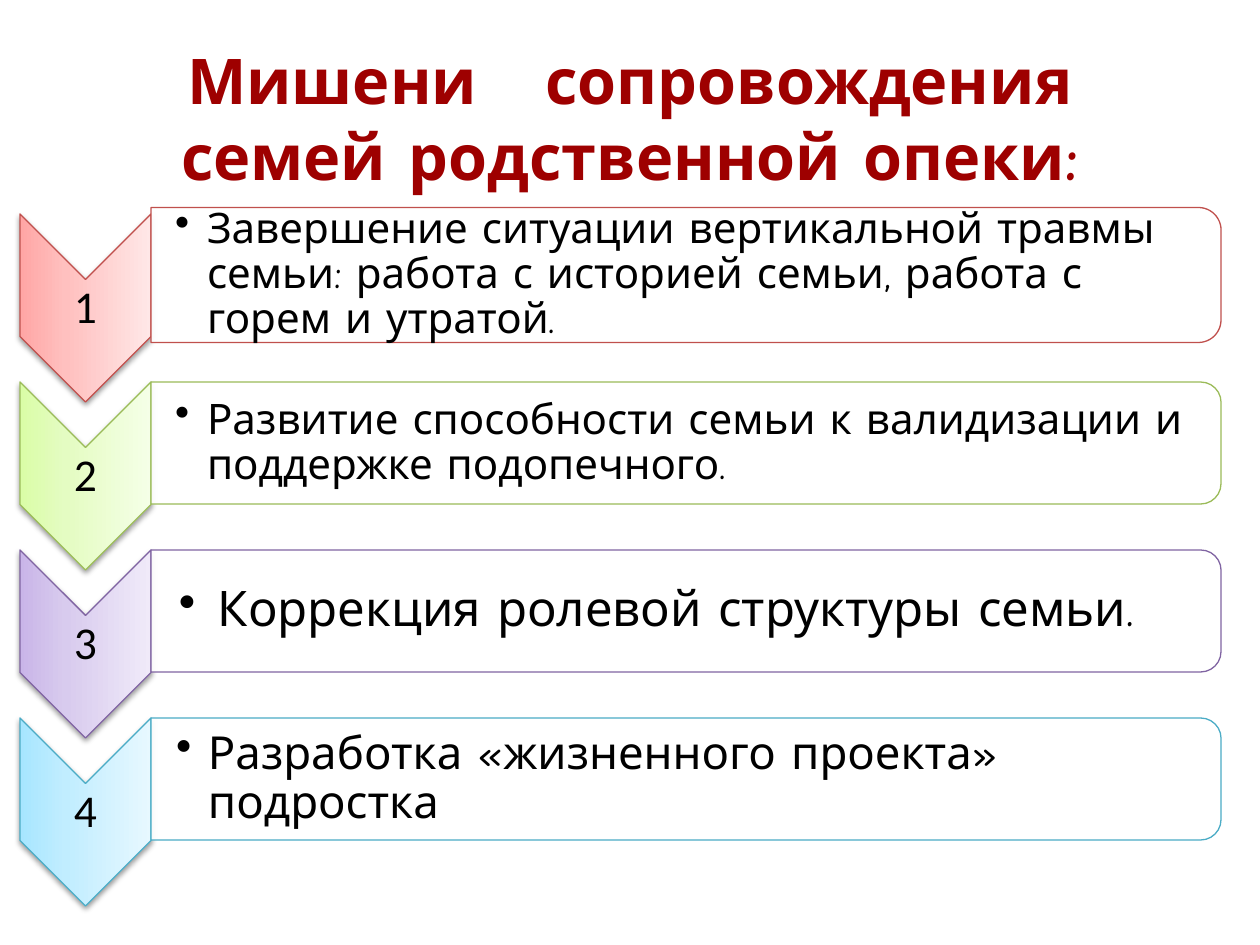
from lxml import etree
from pptx import Presentation
from pptx.dml.color import RGBColor
from pptx.enum.shapes import MSO_SHAPE
from pptx.enum.text import MSO_ANCHOR, PP_ALIGN
from pptx.oxml import parse_xml
from pptx.oxml.ns import nsdecls, qn
from pptx.util import Pt

CHEVRON = MSO_SHAPE.CHEVRON
ROUND_TOP = MSO_SHAPE.ROUND_2_SAME_RECTANGLE
MIDDLE = MSO_ANCHOR.MIDDLE
CENTER, LEFT = PP_ALIGN.CENTER, PP_ALIGN.LEFT

PX_PER_INCH = 126
WIDTH, HEIGHT = 1260, 945
BODY_FONT, NUMBER_FONT = "Comic Neue", "Calibri"

ROW_LEFT, ROW_TOP, ROW_PITCH, ROW_WIDTH = 20, 214, 168, 1201
CHEVRON_WIDTH, CHEVRON_HEIGHT = 131, 188

# text, size, panel height, left inset, indent, line colour, gradient from bottom to top
TARGETS = [
    ("Завершение ситуации вертикальной травмы семьи: работа с историей семьи, "
     "работа с горем и утратой.", 24, 135, 24, 32,
     "C0504D", ("FFA6A5", "FFC0BF", "FFE7E7")),
    ("Развитие способности семьи к валидизации и поддержке подопечного.",
     24, 122, 24, 32, "9BBB59", ("DAFDA7", "E4FCC2", "F5FFE7")),
    ("Коррекция ролевой структуры семьи.", 28, 122, 28, 39,
     "8064A2", ("C9B5E8", "D8CBEE", "F0EAF9")),
    ("Разработка «жизненного проекта» подростка", 26, 122, 25, 32,
     "4BACC6", ("A7E6FF", "C1EDFF", "E7F8FF")),
]


def px(length):
    return round(length * 914400 / PX_PER_INCH)


def rgb(value):
    return RGBColor.from_string(value)


def add_text(slide, box, runs, size, font=BODY_FONT, color="000000", bold=False,
             align=LEFT, insets=(3, 3, 3, 3), line_spacing=None, indent=0):
    """Place one paragraph; runs pairs each text with its letter spacing in points."""
    frame = slide.shapes.add_textbox(*map(px, box)).text_frame
    frame.word_wrap = True
    frame.vertical_anchor = MIDDLE
    (frame.margin_left, frame.margin_top,
     frame.margin_right, frame.margin_bottom) = map(px, insets)
    paragraph = frame.paragraphs[0]
    paragraph.alignment = align
    if line_spacing:
        paragraph.line_spacing = line_spacing
    if indent:
        properties = paragraph._p.get_or_add_pPr()
        properties.set("marL", str(px(indent)))
        properties.set("indent", str(-px(indent)))
        etree.SubElement(properties, qn("a:buChar")).set("char", "•")
    for text, spacing in runs:
        run = paragraph.add_run()
        run.text = text
        run.font.name, run.font.size, run.font.bold = font, Pt(size), bold
        run.font.color.rgb = rgb(color)
        if spacing:
            run._r.get_or_add_rPr().set("spc", str(spacing * 100))


def add_turned_shape(slide, kind, box, line_color):
    """Add a shape turned by 90 degrees that covers the box once turned."""
    left, top, width, height = box
    shift = (width - height) / 2
    shape = slide.shapes.add_shape(
        kind, px(left + shift), px(top - shift), px(height), px(width))
    shape.rotation = 90
    shape.shadow.inherit = False
    shape.line.color.rgb = rgb(line_color)
    shape.line.width = Pt(0.75)
    return shape


def add_chevron(slide, box, number, line_color, gradient):
    chevron = add_turned_shape(slide, CHEVRON, box, line_color)
    stops = "".join(
        f'<a:gs pos="{position}"><a:srgbClr val="{color}"/></a:gs>'
        for position, color in zip((0, 35000, 100000), gradient))
    properties = chevron._element.spPr
    properties.find(qn("a:prstGeom")).addnext(parse_xml(
        f'<a:gradFill {nsdecls("a")} rotWithShape="1"><a:gsLst>{stops}</a:gsLst>'
        '<a:lin ang="16200000" scaled="1"/></a:gradFill>'))
    properties.find(qn("a:effectLst")).append(parse_xml(
        f'<a:outerShdw {nsdecls("a")} blurRad="40000" dist="20000" dir="5400000" '
        'rotWithShape="0"><a:srgbClr val="000000"><a:alpha val="38000"/></a:srgbClr>'
        '</a:outerShdw>'))
    left, top, width, height = box
    notch = width // 2 + 1
    add_text(slide, (left, top + notch, width, height - 2 * notch + 1),
             [(str(number), 0)], 26, font=NUMBER_FONT, align=CENTER, line_spacing=0.9)


def add_panel(slide, box, text, size, inset, indent, line_color):
    panel = add_turned_shape(slide, ROUND_TOP, box, line_color)
    panel.fill.solid()
    panel.fill.fore_color.rgb = rgb("FFFFFF")
    fill_color = panel._element.spPr.find(qn("a:solidFill"))[0]
    etree.SubElement(fill_color, qn("a:alpha")).set("val", "90000")
    left, top, width, height = box
    add_text(slide, (left, top + 6, width - 7, height - 12), [(text, 0)], size,
             insets=(inset, 2, 2, 2), line_spacing=0.9, indent=indent)


def add_target(slide, box, number, target):
    text, size, panel_height, inset, indent, line_color, gradient = target
    left, top, width, height = box
    add_chevron(slide, (left, top, CHEVRON_WIDTH, height), number, line_color, gradient)
    panel_top = top + 61 - panel_height / 2
    add_panel(slide, (left + CHEVRON_WIDTH, panel_top, width - CHEVRON_WIDTH, panel_height),
              text, size, inset, indent, line_color)


def add_title(slide, box):
    add_text(slide, box,
             [("Мишени", 0), (" ", 26), ("сопровождения семей родственной опеки:", 0)],
             36, color="9E0000", bold=True, align=CENTER, insets=(13, 6, 13, 6))


def main():
    deck = Presentation()
    deck.slide_width, deck.slide_height = px(WIDTH), px(HEIGHT)
    slide = deck.slides.add_slide(deck.slide_layouts[6])
    add_title(slide, (63, 38, 1134, 158))
    for index, target in enumerate(TARGETS):
        box = (ROW_LEFT, ROW_TOP + index * ROW_PITCH, ROW_WIDTH, CHEVRON_HEIGHT)
        add_target(slide, box, index + 1, target)
    deck.save("out.pptx")


if __name__ == "__main__":
    main()
